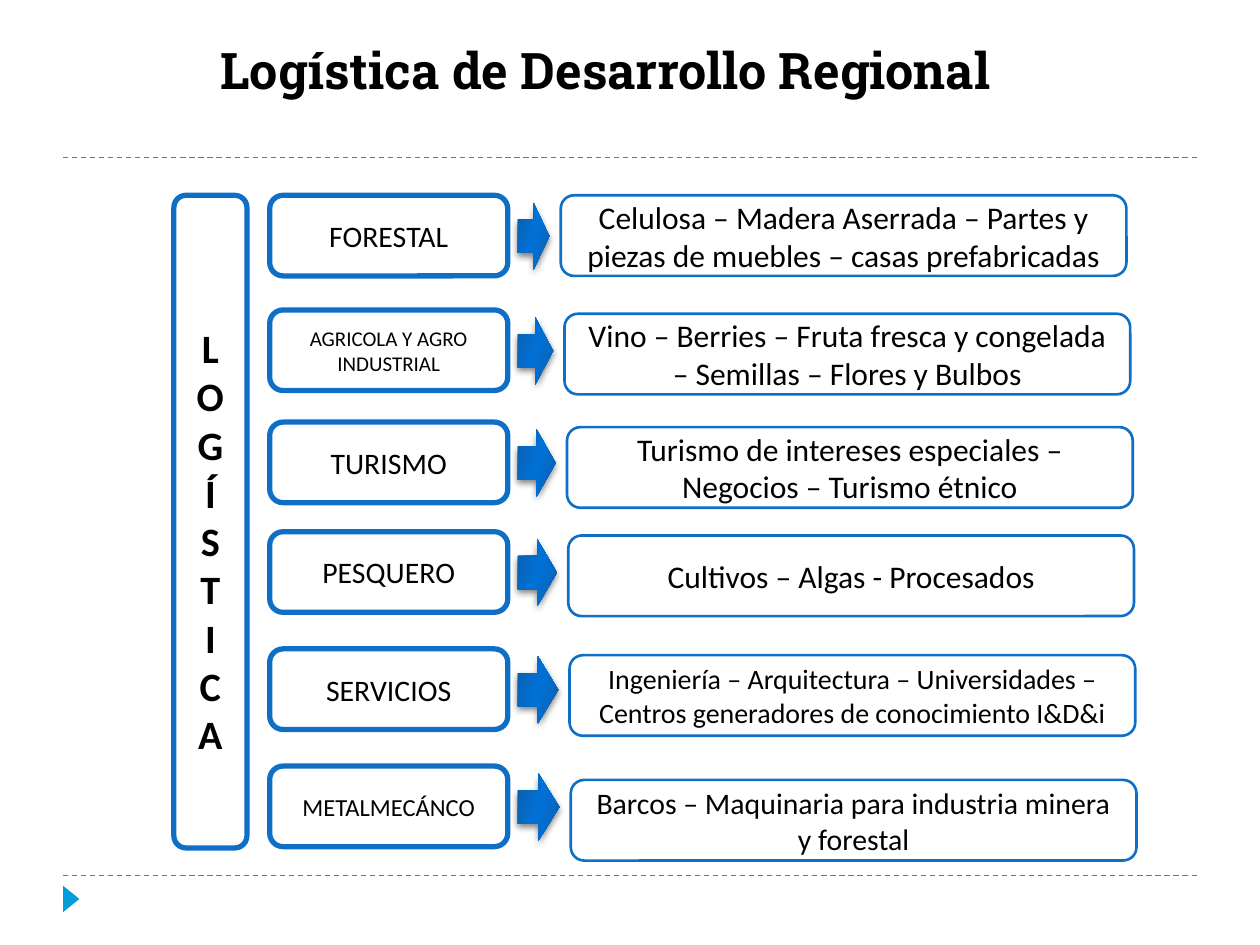
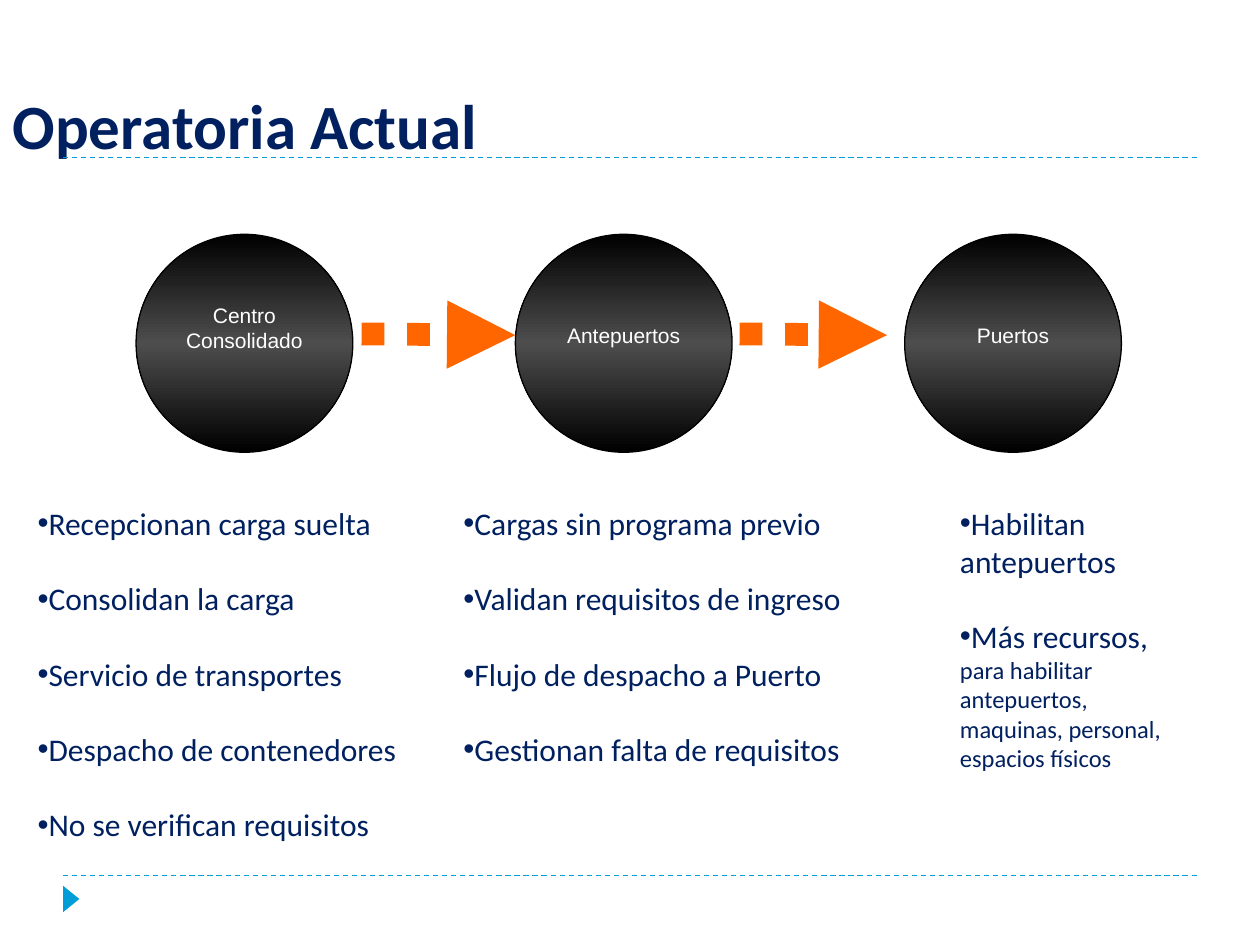
from dataclasses import dataclass

from lxml import etree
from pptx import Presentation
from pptx import util as u
from pptx.dml import color
from pptx.enum import dml, shapes, text
from pptx.oxml import ns


@dataclass(frozen=True)
class Theme:
    black: str = "000000"
    white: str = "FFFFFF"
    navy: str = "002060"
    border: str = "0F6FC6"
    accent: str = "009DD9"
    flow: str = "FF6600"
    arrow_stops: tuple = ((0, "0C5BA2"), (30, "066AC6"), (45, "0070D5"),
                          (55, "0070D5"), (73, "066AC6"), (100, "0C5BA2"))
    ball_stops: tuple = ((0, "000000"), (50, "4D4D4D"), (100, "000000"))
    body_font: str = "Calibri"
    stage_font: str = "Arial"
    heading_font: str = "Roboto Slab"
    heading_size: float = 28.8
    title_size: float = 36
    letter_size: float = 23
    body_size: float = 18
    detail_size: float = 14
    stage_size: float = 12


THEME = Theme()


@dataclass(frozen=True)
class Frame:
    left: float
    top: float
    width: float
    height: float

    def lengths(self) -> tuple:
        return tuple(u.Inches(value) for value in
                     (self.left, self.top, self.width, self.height))


@dataclass(frozen=True)
class Style:
    font: str
    size: float
    tint: str
    bold: bool = False


@dataclass(frozen=True)
class Sector:
    label: str
    label_size: float
    top: float
    products: str
    product_size: float
    product_left: float
    product_top: float


@dataclass(frozen=True)
class Stage:
    name: str
    left: float
    lift: float


@dataclass(frozen=True)
class Column:
    frame: Frame
    items: tuple
    detail: str = ""


SECTORS = (
    Sector("FORESTAL", 17, 1.55,
           "Celulosa – Madera Aserrada – Partes y piezas de muebles – casas prefabricadas",
           18, 4.45, 1.55),
    Sector("AGRICOLA Y AGRO INDUSTRIAL", 12, 2.46,
           "Vino – Berries – Fruta fresca y congelada – Semillas – Flores y Bulbos",
           18, 4.48, 2.49),
    Sector("TURISMO", 17, 3.35,
           "Turismo de intereses especiales – Negocios – Turismo étnico", 18, 4.5, 3.39),
    Sector("PESQUERO", 17, 4.22, "Cultivos – Algas - Procesados", 18, 4.51, 4.25),
    Sector("SERVICIOS", 17, 5.15,
           "Ingeniería – Arquitectura – Universidades – "
           "Centros generadores de conocimiento I&D&i", 16, 4.52, 5.2),
    Sector("METALMECÁNCO", 14, 6.08,
           "Barcos – Maquinaria para industria minera y forestal", 17, 4.53, 6.19),
)

STAGES = (
    Stage("Centro\nConsolidado", 1.08, 0.25),
    Stage("Antepuertos", 4.09, 0.13),
    Stage("Puertos", 7.18, 0.13),
)

COLUMNS = (
    Column(Frame(0.2, 3.95, 3.15, 2.16),
           ("Recepcionan carga suelta", "Consolidan la carga", "Servicio de transportes",
            "Despacho de contenedores", "No se verifican requisitos")),
    Column(Frame(3.58, 3.95, 3.31, 2.16),
           ("Cargas sin programa previo", "Validan requisitos de ingreso",
            "Flujo de despacho a Puerto", "Gestionan falta de requisitos")),
    Column(Frame(7.52, 3.95, 1.89, 2.08), ("Habilitan antepuertos", "Más recursos,"),
           " para habilitar antepuertos, maquinas, personal, espacios físicos"),
)


def rgb(value: str) -> color.RGBColor:
    return color.RGBColor.from_string(value)


def child(parent, tag: str, **attributes):
    return etree.SubElement(parent, ns.qn(tag), attributes)


def style_span(span, style: Style) -> None:
    span.font.name = style.font
    span.font.size = u.Pt(style.size)
    span.font.bold = style.bold
    span.font.color.rgb = rgb(style.tint)


def write(box, content: str, style: Style, align=text.PP_ALIGN.CENTER,
          anchor=text.MSO_ANCHOR.MIDDLE) -> None:
    frame = box.text_frame
    frame.text = content
    frame.word_wrap = True
    frame.auto_size = text.MSO_AUTO_SIZE.NONE
    frame.vertical_anchor = anchor
    for para in frame.paragraphs:
        para.alignment = align
        for span in para.runs:
            style_span(span, style)


def add_title(page, content: str, frame: Frame, style: Style, anchor) -> None:
    title = page.shapes.title
    title.left, title.top, title.width, title.height = frame.lengths()
    write(title, content, style, text.PP_ALIGN.LEFT, anchor)


def add_figure(page, kind, frame: Frame, fill: str = "", line: str = "",
               weight: float = 0.75):
    figure = page.shapes.add_shape(kind, *frame.lengths())
    figure.shadow.inherit = False
    if fill:
        figure.fill.solid()
        figure.fill.fore_color.rgb = rgb(fill)
    if line:
        figure.line.color.rgb = rgb(line)
        figure.line.width = u.Pt(weight)
    else:
        figure.line.fill.background()
    return figure


def add_card(page, frame: Frame, weight: float, content: str, style: Style):
    card = add_figure(page, shapes.MSO_SHAPE.ROUNDED_RECTANGLE, frame,
                      THEME.white, THEME.border, weight)
    write(card, content, style)
    return card


def shade(figure, stops: tuple, clockwise: float) -> None:
    figure.fill.gradient()
    figure.fill.gradient_angle = 360 - clockwise
    stop_list = figure._element.spPr.find(".//" + ns.qn("a:gsLst"))
    for stop in list(stop_list):
        stop_list.remove(stop)
    for position, tint in stops:
        stop = child(stop_list, "a:gs", pos=str(position * 1000))
        child(stop, "a:srgbClr", val=tint)


def cast_shadow(figure) -> None:
    effects = figure._element.spPr.find(ns.qn("a:effectLst"))
    shadow = child(effects, "a:outerShdw", blurRad=str(u.Pt(4)), dist=str(u.Pt(2)),
                   dir="5400000", rotWithShape="0")
    tint = child(shadow, "a:srgbClr", val=THEME.black)
    child(tint, "a:alpha", val="50000")


def add_line(page, start: tuple, end: tuple, tint: str, weight: float, dash):
    line = page.shapes.add_connector(
        shapes.MSO_CONNECTOR.STRAIGHT, *(u.Inches(value) for value in start + end))
    child(line._element.spPr, "a:effectLst")
    line.line.color.rgb = rgb(tint)
    line.line.width = u.Pt(weight)
    line.line.dash_style = dash
    return line


def add_page(deck):
    page = deck.slides.add_slide(deck.slide_layouts[5])
    for height in (6.95, 1.25):
        add_line(page, (0.5, height), (9.5, height), THEME.accent, 0.75,
                 dml.MSO_LINE.DASH)
    marker = add_figure(page, shapes.MSO_SHAPE.ISOSCELES_TRIANGLE,
                        Frame(0.46, 7.07, 0.21, 0.13), THEME.accent)
    marker.rotation = 90
    return page


def add_sector(page, sector: Sector) -> None:
    arrow_left, arrow_gap = 4.11, 0.09
    add_card(page, Frame(2.14, sector.top, 1.89, 0.64), 3, sector.label,
             Style(THEME.body_font, sector.label_size, THEME.black))
    add_card(page, Frame(sector.product_left, sector.product_top, 4.49, 0.64), 1.5,
             sector.products, Style(THEME.body_font, sector.product_size, THEME.black))
    arrow = add_figure(page, shapes.MSO_SHAPE.RIGHT_ARROW, Frame(
        arrow_left, sector.top + 0.06,
        sector.product_left - arrow_left - arrow_gap, 0.53))
    shade(arrow, THEME.arrow_stops, 16)
    cast_shadow(arrow)


def add_stage(page, stage: Stage) -> None:
    ball = add_figure(page, shapes.MSO_SHAPE.OVAL, Frame(stage.left, 1.86, 1.72, 1.73),
                      line=THEME.black)
    shade(ball, THEME.ball_stops, 90)
    write(ball, stage.name, Style(THEME.stage_font, THEME.stage_size, THEME.white))
    frame = ball.text_frame
    frame.margin_left = frame.margin_right = frame.margin_top = 0
    frame.margin_bottom = u.Inches(stage.lift)


def add_flow(page, left: float, right: float) -> None:
    flow = add_line(page, (left, 2.65), (right, 2.66), THEME.flow, 13,
                    dml.MSO_LINE.ROUND_DOT)
    child(flow.line._get_or_add_ln(), "a:tailEnd", type="triangle")


def add_column(page, column: Column) -> None:
    style = Style(THEME.body_font, THEME.body_size, THEME.navy)
    box = page.shapes.add_textbox(*column.frame.lengths())
    write(box, "\n".join(column.items), style, text.PP_ALIGN.LEFT, text.MSO_ANCHOR.TOP)
    paragraphs = box.text_frame.paragraphs
    for index, para in enumerate(paragraphs):
        properties = para._p.get_or_add_pPr()
        properties.set("marL", "0")
        properties.set("indent", "0")
        child(properties, "a:buFont", typeface=THEME.stage_font)
        child(properties, "a:buChar", char="•")
        if index:
            para.space_before = u.Pt(21.5)
    if column.detail:
        span = paragraphs[-1].add_run()
        span.text = column.detail
        style_span(span, Style(THEME.body_font, THEME.detail_size, THEME.navy))


def build_logistics(deck) -> None:
    page = add_page(deck)
    add_title(page, "Logística de Desarrollo Regional", Frame(1.08, 0.05, 8.51, 0.79),
              Style(THEME.heading_font, THEME.heading_size, THEME.black, True),
              text.MSO_ANCHOR.BOTTOM)
    page.shapes.title.text_frame.margin_left = u.Inches(0.67)
    for sector in SECTORS:
        add_sector(page, sector)
    pillar = add_card(page, Frame(1.38, 1.55, 0.58, 5.18), 3, "\n".join("LOGÍSTICA"),
                      Style(THEME.body_font, THEME.letter_size, THEME.black, True))
    pillar.text_frame.margin_top = u.Inches(0.35)


def build_operation(deck) -> None:
    page = add_page(deck)
    add_title(page, "Operatoria Actual", Frame(0, 0.64, 4.95, 0.71),
              Style(THEME.body_font, THEME.title_size, THEME.navy, True),
              text.MSO_ANCHOR.TOP)
    for column in COLUMNS:
        add_column(page, column)
    for stage in STAGES:
        add_stage(page, stage)
    for left, right in ((2.87, 4.09), (5.87, 7.04)):
        add_flow(page, left, right)


def main() -> None:
    deck = Presentation()
    deck.slide_width, deck.slide_height = u.Inches(10), u.Inches(7.5)
    build_logistics(deck)
    build_operation(deck)
    deck.save("out.pptx")


if __name__ == "__main__":
    main()
